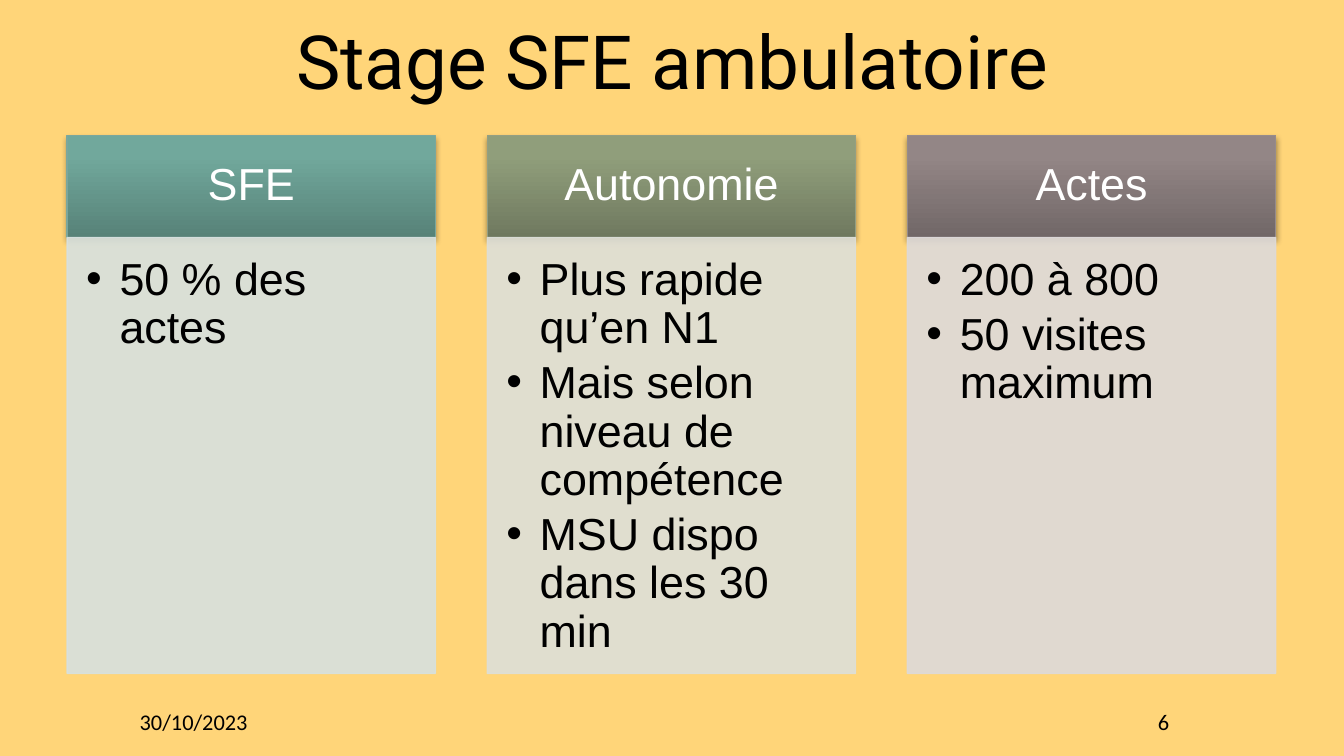
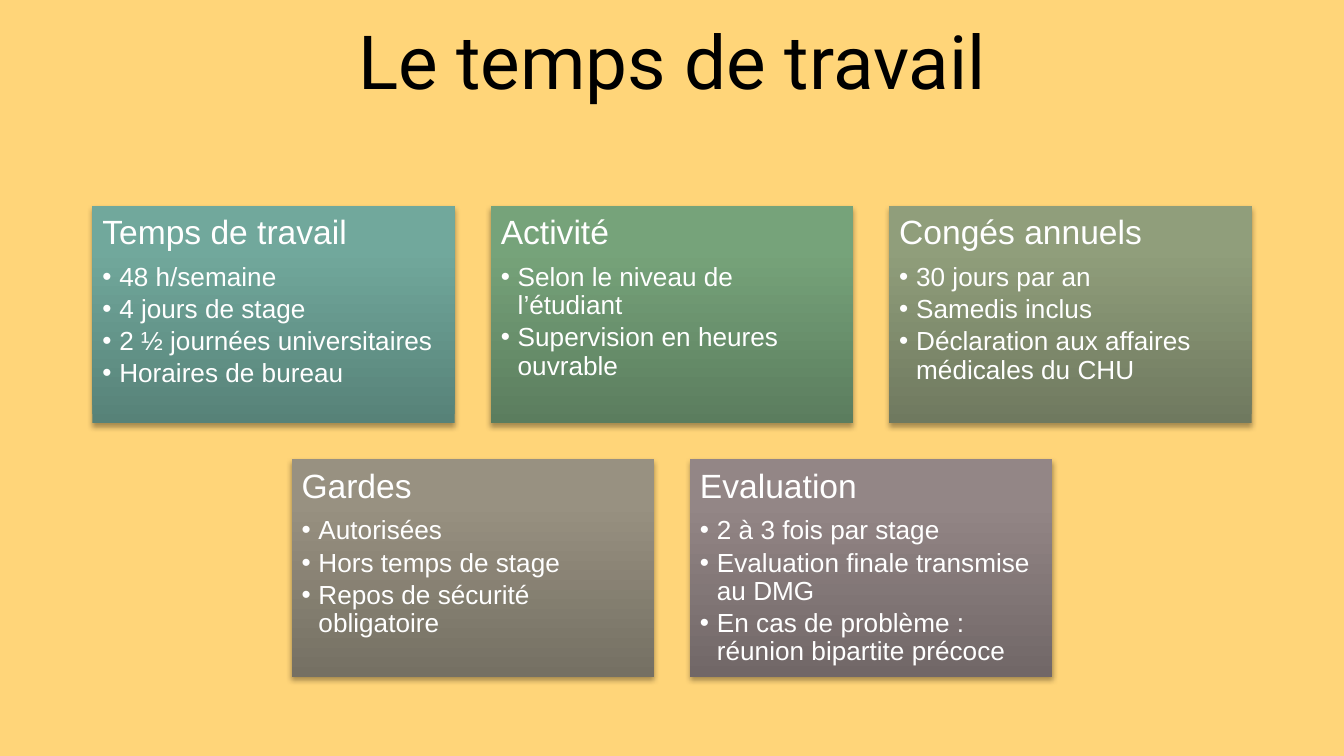
from dataclasses import dataclass

from lxml.etree import SubElement
from pptx import Presentation
from pptx.dml.color import RGBColor
from pptx.enum.shapes import MSO_SHAPE
from pptx.enum.text import MSO_ANCHOR, MSO_AUTO_SIZE, PP_ALIGN
from pptx.oxml.ns import qn
from pptx.util import Cm, Pt


@dataclass(frozen=True)
class Tint:
    """Gradient stops from bottom to top, with optional border and panel colours."""
    low: str
    mid: str
    high: str
    border: str = ""
    panel: str = ""


@dataclass(frozen=True)
class Theme:
    """Colours, fonts and type sizes shared by the slides."""
    bg: str = "FFD579"
    dark: str = "000000"
    light: str = "FFFFFF"
    title_font: str = "Roboto"
    body_font: str = "Arial"
    footer_font: str = "Calibri"
    title_size: int = 40
    column_size: int = 24
    card_head_size: int = 18
    card_size: int = 14
    footer_size: int = 12
    teal: Tint = Tint("578278", "71A89C", "70AA9D", "7BA79D", "D7E1DF")
    green: Tint = Tint("5B7D5E", "76A37A", "76A47A")
    olive: Tint = Tint("6F795F", "909E7B", "919F7B", "949F83", "DDDFD9")
    sand: Tint = Tint("757063", "989181", "999281")
    mauve: Tint = Tint("716767", "938686", "948787", "968C8C", "DDDADA")


T = Theme()
W, H = 25.4, 14.29

COLUMNS = [
    ("SFE", T.teal, ["50 % des actes"]),
    ("Autonomie", T.olive, ["Plus rapide qu’en N1", "Mais selon niveau de compétence",
                            "MSU dispo dans les 30 min"]),
    ("Actes", T.mauve, ["200 à 800", "50 visites maximum"]),
]
CARD_ROWS = [
    [("Temps de travail", T.teal, ["48 h/semaine", "4 jours de stage",
                                   "2 ½ journées universitaires", "Horaires de bureau"]),
     ("Activité", T.green, ["Selon le niveau de l’étudiant",
                            "Supervision en heures ouvrable"]),
     ("Congés annuels", T.olive, ["30 jours par an", "Samedis inclus",
                                  "Déclaration aux affaires médicales du CHU"])],
    [("Gardes", T.sand, ["Autorisées", "Hors temps de stage",
                         "Repos de sécurité obligatoire"]),
     ("Evaluation", T.mauve, ["2 à 3 fois par stage", "Evaluation finale transmise au DMG",
                              "En cas de problème : réunion bipartite précoce"])],
]


def set_frame(tf, margins=(0, 0, 0, 0), anchor=MSO_ANCHOR.MIDDLE):
    """Set wrapping, anchor and margins (left, top, right, bottom) of a text frame."""
    tf.word_wrap = True
    tf.auto_size = MSO_AUTO_SIZE.NONE
    tf.vertical_anchor = anchor
    tf.margin_left, tf.margin_top, tf.margin_right, tf.margin_bottom = map(Cm, margins)


def add_text(tf, text, *, size, color=T.dark, font=T.body_font, align=PP_ALIGN.LEFT,
             spacing=0.9, after=0, hang=0):
    """Write one paragraph, bulleted when a hanging indent is given."""
    p = tf.paragraphs[0] if not tf.text else tf.add_paragraph()
    if hang:
        p.level = 1
        pPr = p._p.get_or_add_pPr()
        pPr.set("marL", str(Cm(hang)))
        pPr.set("indent", str(-Cm(hang)))
        SubElement(pPr, qn("a:buFont"), typeface="Arial")
        SubElement(pPr, qn("a:buChar"), char="•")
    p.alignment = align
    p.line_spacing = spacing
    p.space_before = Pt(0)
    p.space_after = Pt(after * size)
    r = p.add_run()
    r.text = text
    r.font.size = Pt(size)
    r.font.name = font
    r.font.color.rgb = RGBColor.from_string(color)


def add_bullets(tf, items, **fmt):
    """Write a bulleted list."""
    for item in items:
        add_text(tf, item, after=0.15, **fmt)


def add_box(s, x, y, w, h, border=""):
    """Add a rectangle without shadow, outlined only when a border colour is given."""
    sp = s.shapes.add_shape(MSO_SHAPE.RECTANGLE, Cm(x), Cm(y), Cm(w), Cm(h))
    sp.shadow.inherit = False
    if border:
        sp.line.color.rgb = RGBColor.from_string(border)
        sp.line.width = Pt(0.75)
    else:
        sp.line.fill.background()
    return sp


def add_raised_box(s, x, y, w, h, tint, border=""):
    """Add a rectangle with a vertical gradient and a soft shadow below."""
    sp = add_box(s, x, y, w, h, border)
    sp.fill.gradient()
    sp.fill.gradient_angle = 90
    spPr = sp._element.spPr
    stops = spPr.find(".//" + qn("a:gsLst"))
    stops.clear()
    for pos, color in ((0, tint.low), (80, tint.mid), (100, tint.high)):
        gs = SubElement(stops, qn("a:gs"), pos=str(pos * 1000))
        SubElement(gs, qn("a:srgbClr"), val=color)
    shadow = SubElement(spPr.find(qn("a:effectLst")), qn("a:outerShdw"), blurRad=str(Pt(3.1)),
                        dist=str(Pt(1.8)), dir="5400000", rotWithShape="0")
    black = SubElement(shadow, qn("a:srgbClr"), val="000000")
    SubElement(black, qn("a:alpha"), val="35000")
    return sp


def add_panel(s, x, y, w, h, color):
    """Add a slightly transparent flat rectangle."""
    sp = add_box(s, x, y, w, h, color)
    sp.fill.solid()
    sp.fill.fore_color.rgb = RGBColor.from_string(color)
    for clr in sp._element.spPr.iter(qn("a:srgbClr")):
        SubElement(clr, qn("a:alpha"), val="90000")
    return sp


def add_column(s, x, head, tint, items):
    """Add a header band with a bulleted panel under it."""
    top, width, head_h, panel_h = 2.56, 6.96, 1.93, 8.24
    tf = add_raised_box(s, x, top, width, head_h, tint, tint.border).text_frame
    set_frame(tf, (0.48, 0.28, 0.48, 0.28))
    add_text(tf, head, size=T.column_size, color=T.light, align=PP_ALIGN.CENTER)
    tf = add_panel(s, x, top + head_h, width, panel_h, tint.panel).text_frame
    set_frame(tf, (0.36, 0.36, 0.48, 0.53), MSO_ANCHOR.TOP)
    add_bullets(tf, items, size=T.column_size, hang=0.63)


def add_card(s, x, y, w, h, head, tint, items):
    """Add a card with a heading and a bulleted list."""
    tf = add_raised_box(s, x, y, w, h, tint).text_frame
    set_frame(tf, (0.19,) * 4, MSO_ANCHOR.TOP)
    add_text(tf, head, size=T.card_head_size, color=T.light, after=0.35)
    add_bullets(tf, items, size=T.card_size, color=T.light, hang=0.32)


def add_card_rows(s, rows):
    """Lay out rows of cards, each row centred on the slide."""
    top, width, height, gap = 3.89, 6.85, 4.11, 0.68
    for i, row in enumerate(rows):
        left = (W - len(row) * (width + gap) + gap) / 2
        for j, card in enumerate(row):
            add_card(s, left + j * (width + gap), top + i * (height + gap),
                     width, height, *card)


def add_footer(s, x, w, text, align):
    """Add one footer entry."""
    tf = s.shapes.add_textbox(Cm(x), Cm(13.16), Cm(w), Cm(0.99)).text_frame
    set_frame(tf)
    add_text(tf, text, size=T.footer_size, font=T.footer_font, align=align, spacing=0.95)


def add_titled_slide(prs, title):
    """Add a slide with the shared background and title style."""
    s = prs.slides.add_slide(prs.slide_layouts[5])
    s.background.fill.solid()
    s.background.fill.fore_color.rgb = RGBColor.from_string(T.bg)
    sp = s.shapes.title
    sp.left, sp.top, sp.width, sp.height = Cm(0.5), Cm(0.3), Cm(W - 1), Cm(1.85)
    set_frame(sp.text_frame)
    add_text(sp.text_frame, title, size=T.title_size, font=T.title_font,
             align=PP_ALIGN.CENTER, spacing=0.93)
    return s


def main():
    """Build and save the deck."""
    prs = Presentation()
    prs.slide_width, prs.slide_height = Cm(W), Cm(H)

    s = add_titled_slide(prs, "Stage SFE ambulatoire")
    for i, column in enumerate(COLUMNS):
        add_column(s, 1.27 + i * 7.94, *column)
    add_footer(s, 2.64, 2.64, "30/10/2023", PP_ALIGN.LEFT)
    add_footer(s, 18.9, 3.2, "6", PP_ALIGN.RIGHT)

    s = add_titled_slide(prs, "Le temps de travail")
    add_card_rows(s, CARD_ROWS)

    prs.save("out.pptx")


if __name__ == "__main__":
    main()
